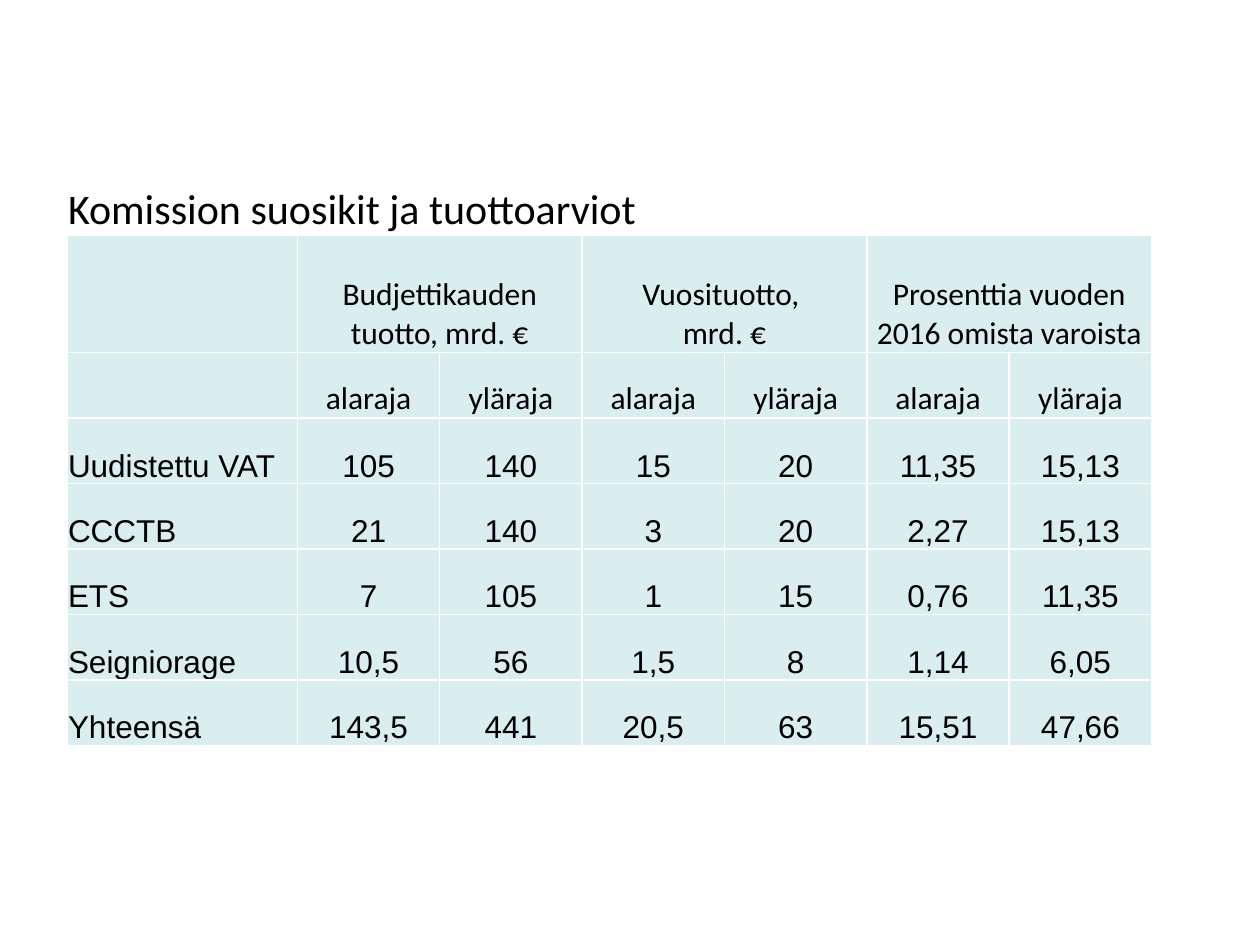
from lxml.etree import SubElement
from pptx import Presentation
from pptx.dml.color import RGBColor
from pptx.enum.text import MSO_ANCHOR as Anchor, PP_ALIGN as Align
from pptx.oxml.ns import qn
from pptx.util import Inches, Pt

WHITE = RGBColor(0xFF, 0xFF, 0xFF)
BLACK = RGBColor(0x00, 0x00, 0x00)
PALE_TEAL = RGBColor(0xDA, 0xED, 0xEF)

TITLE_ROW, LIMITS_ROW = 0, 2
ROWS = [
    ["Komission suosikit ja tuottoarviot"] + [""] * 6,
    ["", "Budjettikauden tuotto, mrd. €", "", "Vuosituotto, \nmrd. €", "",
     "Prosenttia vuoden 2016 omista varoista", ""],
    [""] + ["alaraja", "yläraja"] * 3,
    ["Uudistettu VAT", "105", "140", "15", "20", "11,35", "15,13"],
    ["CCCTB", "21", "140", "3", "20", "2,27", "15,13"],
    ["ETS", "7", "105", "1", "15", "0,76", "11,35"],
    ["Seigniorage", "10,5", "56", "1,5", "8", "1,14", "6,05"],
    ["Yhteensä", "143,5", "441", "20,5", "63", "15,51", "47,66"],
]
COLUMN_WIDTHS = [1.83] + [1.13] * 6
ROW_HEIGHTS = [0.67, 0.93] + [0.52] * 6


def add_borders(cell):
    """Give a cell thin white lines on all four sides."""
    properties = cell._tc.get_or_add_tcPr()
    for side in ("a:lnL", "a:lnR", "a:lnT", "a:lnB"):
        line = SubElement(properties, qn(side), w=str(Pt(1)))
        fill = SubElement(line, qn("a:solidFill"))
        SubElement(fill, qn("a:srgbClr"), val=str(WHITE))


presentation = Presentation()
presentation.slide_width = Inches(10)
presentation.slide_height = Inches(7.5)
slide = presentation.slides.add_slide(presentation.slide_layouts[6])

# Table grid
table = slide.shapes.add_table(
    len(ROWS), len(COLUMN_WIDTHS), Inches(0.53), Inches(1.2),
    Inches(sum(COLUMN_WIDTHS)), Inches(sum(ROW_HEIGHTS))).table
table.first_row = False
table.horz_banding = False
for column, width in zip(table.columns, COLUMN_WIDTHS):
    column.width = Inches(width)
for row, height in zip(table.rows, ROW_HEIGHTS):
    row.height = Inches(height)

# Title across the table, each heading across its pair of limits
table.cell(TITLE_ROW, 0).merge(table.cell(TITLE_ROW, 6))
for first in (1, 3, 5):
    table.cell(1, first).merge(table.cell(1, first + 1))

# Cell formats and text
for row_index, texts in enumerate(ROWS):
    is_title = row_index == TITLE_ROW
    for column_index, text in enumerate(texts):
        cell = table.cell(row_index, column_index)
        add_borders(cell)
        cell.fill.solid()
        cell.fill.fore_color.rgb = WHITE if is_title else PALE_TEAL
        if not text:
            continue
        cell.vertical_anchor = Anchor.BOTTOM
        cell.margin_left = cell.margin_right = cell.margin_top = Inches(0.01)
        cell.margin_bottom = Inches(0)
        for line_index, line_text in enumerate(text.split("\n")):
            frame = cell.text_frame
            paragraph = frame.add_paragraph() if line_index else frame.paragraphs[0]
            paragraph.alignment = Align.CENTER if column_index else Align.LEFT
            run = paragraph.add_run()
            run.text = line_text
            run.font.name = "Calibri" if row_index <= LIMITS_ROW else "Arial"
            run.font.size = Pt(24 if is_title else 18)
            run.font.color.rgb = BLACK

presentation.save("out.pptx")
